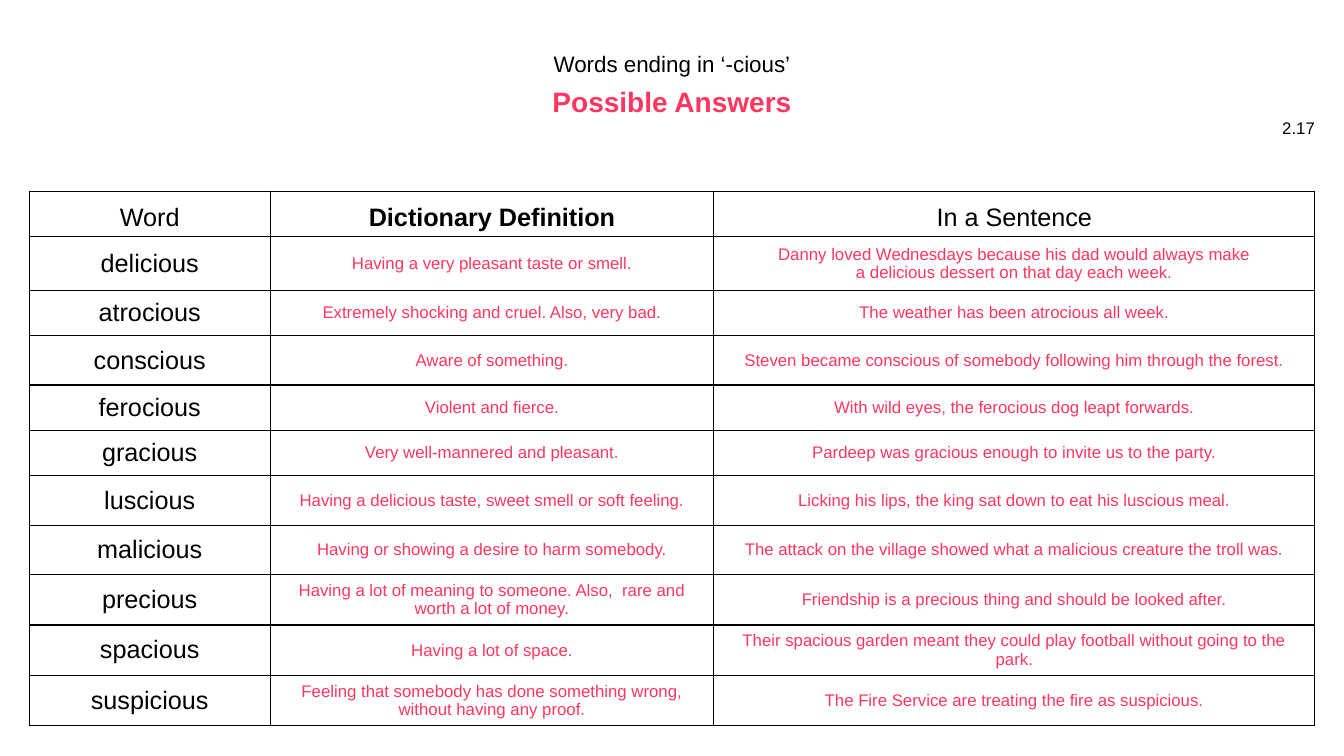
from lxml.etree import SubElement
from pptx import Presentation
from pptx.dml.color import RGBColor
from pptx.enum.text import MSO_ANCHOR, PP_ALIGN
from pptx.oxml.ns import qn
from pptx.util import Inches, Pt

BLACK = RGBColor(0x00, 0x00, 0x00)
PINK = RGBColor(0xFF, 0x37, 0x60)
NBSP = chr(160)

COLUMN_WIDTHS = (2.39, 4.4, 5.96)
ROW_HEIGHTS = (0.45, 0.53, 0.45, 0.49, 0.45, 0.45) + (0.49,) * 5
HEADINGS = ("Word", "Dictionary Definition", "In a Sentence")
ANSWERS = (
    ("delicious", "Having a very pleasant taste or smell.",
     "Danny loved Wednesdays because his dad would always make a delicious dessert on that day each week."),
    ("atrocious", "Extremely shocking and cruel. Also, very bad.",
     "The weather has been atrocious all week."),
    ("conscious", "Aware of something.",
     "Steven became conscious of somebody following him through the forest."),
    ("ferocious", "Violent and fierce.",
     "With wild eyes, the ferocious dog leapt forwards."),
    ("gracious", "Very well-mannered and pleasant.",
     "Pardeep was gracious enough to invite us to the party."),
    ("luscious", "Having a delicious taste, sweet smell or soft feeling.",
     "Licking his lips, the king sat down to eat his luscious meal."),
    ("malicious", "Having or showing a desire to harm somebody.",
     "The attack on the village showed what a malicious creature the troll was."),
    ("precious", f"Having a lot of meaning to someone. Also, {NBSP}rare and worth a lot of money.",
     "Friendship is a precious thing and should be looked after."),
    ("spacious", "Having a lot of space.",
     "Their spacious garden meant they could play football without going to the park."),
    ("suspicious", "Feeling that somebody has done something wrong, without having any proof.",
     "The Fire Service are treating the fire as suspicious."),
)


def write(frame, text, size=12, color=BLACK, bold=False, align=PP_ALIGN.CENTER, spacing=1.0):
    """Put one formatted paragraph into a text frame."""
    paragraph = frame.paragraphs[0]
    paragraph.alignment = align
    paragraph.line_spacing = spacing
    paragraph.space_before = Pt(0)
    run = paragraph.add_run()
    run.text = text
    run.font.name = "Arial"
    run.font.size = Pt(size)
    run.font.bold = bold
    run.font.color.rgb = color


def keep_with_neighbours(sentence, word):
    """Tie the studied word to the words beside it."""
    return sentence.replace(f" {word}", NBSP + word).replace(f"{word} ", word + NBSP)


class AnswerSlide:
    def __init__(self, presentation):
        self.slide = presentation.slides.add_slide(presentation.slide_layouts[5])

    def place(self, shape, box, text, **style):
        shape.left, shape.top, shape.width, shape.height = map(Inches, box)
        frame = shape.text_frame
        frame.word_wrap = True
        frame.vertical_anchor = MSO_ANCHOR.MIDDLE
        frame.margin_top = frame.margin_bottom = 0
        write(frame, text, **style)

    def title(self, box, text, **style):
        self.place(self.slide.shapes.title, box, text, **style)

    def label(self, box, text, **style):
        self.place(self.slide.shapes.add_textbox(*map(Inches, box)), box, text, **style)

    def border(self, cell):
        properties = cell._tc.get_or_add_tcPr()
        for position, side in enumerate(("lnL", "lnR", "lnT", "lnB")):
            line = SubElement(properties, qn(f"a:{side}"), w=str(Pt(1)))
            fill = SubElement(line, qn("a:solidFill"))
            SubElement(fill, qn("a:srgbClr"), val=str(BLACK))
            properties.insert(position, line)

    def cell(self, cell, text, anchor=MSO_ANCHOR.MIDDLE, **style):
        cell.fill.background()
        cell.vertical_anchor = anchor
        self.border(cell)
        write(cell.text_frame, text, **style)

    def table(self, left, top):
        grid = self.slide.shapes.add_table(
            len(ROW_HEIGHTS), len(COLUMN_WIDTHS), Inches(left), Inches(top),
            Inches(sum(COLUMN_WIDTHS)), Inches(sum(ROW_HEIGHTS))).table
        grid.first_row = grid.horz_banding = False
        for column, width in zip(grid.columns, COLUMN_WIDTHS):
            column.width = Inches(width)
        for row, height in zip(grid.rows, ROW_HEIGHTS):
            row.height = Inches(height)

        for column, heading in enumerate(HEADINGS):
            self.cell(grid.cell(0, column), heading, anchor=MSO_ANCHOR.BOTTOM,
                      size=18, bold=column == 1)
        for row, (word, definition, sentence) in enumerate(ANSWERS, start=1):
            self.cell(grid.cell(row, 0), word, size=18)
            self.cell(grid.cell(row, 1), definition, color=PINK)
            self.cell(grid.cell(row, 2), keep_with_neighbours(sentence, word), color=PINK)


def main():
    presentation = Presentation()
    presentation.slide_width = Inches(13.33)
    presentation.slide_height = Inches(7.5)
    answers = AnswerSlide(presentation)

    # Headings and page reference
    answers.title((3.82, 0.47, 5.69, 0.35), "Words ending in ‘-cious’", size=16, spacing=0.9)
    answers.label((2.42, 0.83, 8.49, 0.4), "Possible Answers",
                  size=20, color=PINK, bold=True, spacing=0.9)
    answers.label((12.51, 1.07, 0.63, 0.4), "2.17", align=PP_ALIGN.RIGHT)

    # Words, definitions and example sentences
    answers.table(0.29, 1.9)

    presentation.save("out.pptx")


if __name__ == "__main__":
    main()
